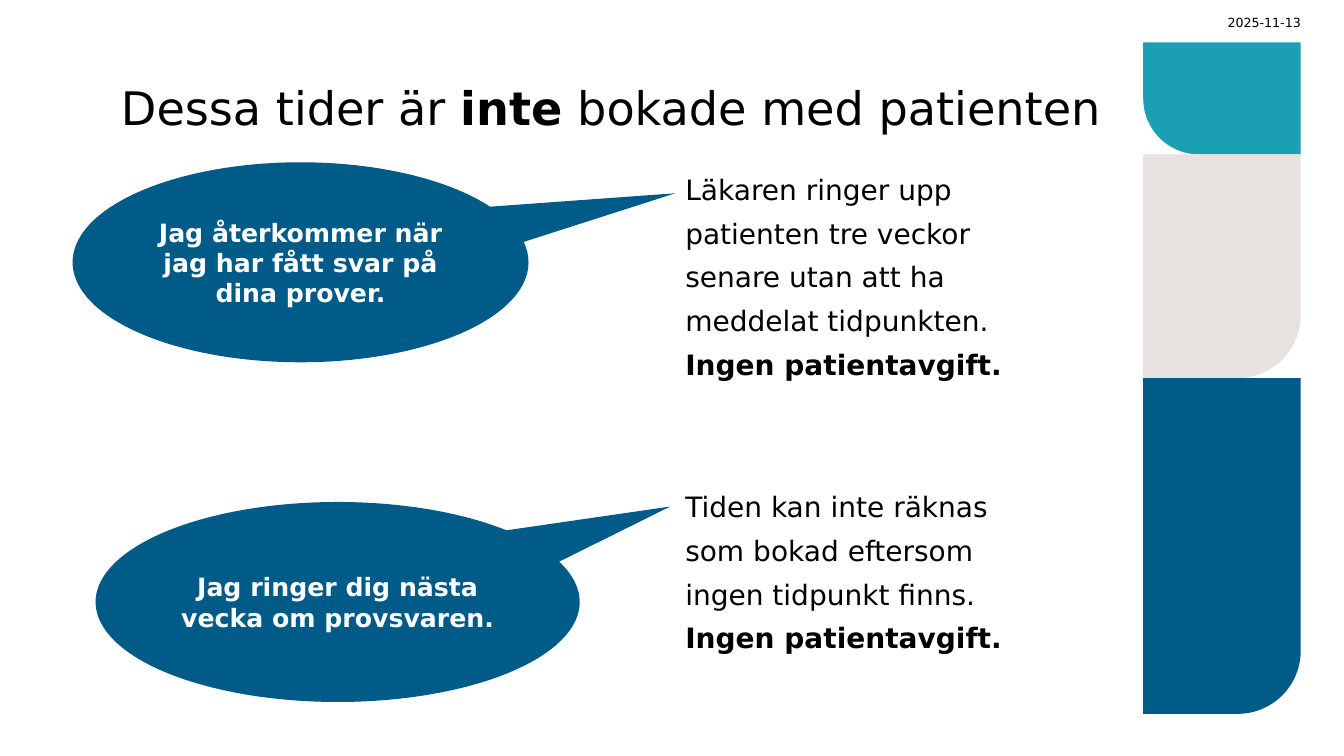
from pptx import Presentation
from pptx.dml.color import RGBColor
from pptx.enum import shapes, text
from pptx.util import Cm, Pt

FONT = "DejaVu Sans"
COLORS = {"black": "000000", "white": "FFFFFF", "teal": "1A9FB3",
          "sand": "E7E1DF", "blue": "005B89"}

deck = Presentation()
deck.slide_width, deck.slide_height = Cm(33.87), Cm(19.05)
page = deck.slides.add_slide(deck.slide_layouts[6])


def add_filled(preset, left, top, width, height, color):
    shape = page.shapes.add_shape(preset, Cm(left), Cm(top), Cm(width), Cm(height))
    shape.shadow.inherit = False
    shape.fill.solid()
    shape.fill.fore_color.rgb = RGBColor.from_string(COLORS[color])
    shape.line.fill.background()
    return shape


def write(frame, parts, size, color="black"):
    """Fill the first paragraph with (wording, bold) parts; None breaks the line."""
    frame.word_wrap = True
    para = frame.paragraphs[0]
    para.font.name, para.font.size = FONT, Pt(size)
    para.font.color.rgb = RGBColor.from_string(COLORS[color])
    for part in parts:
        if part is None:
            para.add_line_break()
            continue
        span = para.add_run()
        span.text, span.font.bold = part
    return para


# Side column: three blocks, one, two and three units high
UNIT = 2.82
block_top = 1.07
for units, color, radius in [(1, "teal", 0.5), (2, "sand", 0.4), (3, "blue", 0.4)]:
    block = add_filled(shapes.MSO_SHAPE.ROUND_1_RECTANGLE,
                       28.81, block_top, 3.97, units * UNIT, color)
    block.adjustments[0] = radius
    if color == "teal":
        block.rotation = 180  # round corner at bottom left
    else:
        block._element.spPr.xfrm.set("flipV", "1")  # round corner at bottom right
    block_top += units * UNIT

# Title, explanations and date: place, size, line spacing, space before, parts
FEE = ("Ingen patientavgift.", True)
text_boxes = [
    ((3.05, 1.85, 25.07, 3.4), 33, 1.1, 0,
     [("Dessa tider är ", False), ("inte", True), (" bokade med patienten", False)]),
    ((17.27, 4.09, 9.2, 7.19), 20, 1.3, 10,
     [("Läkaren ringer upp patienten tre veckor senare utan att ha "
       "meddelat tidpunkten. ", False), FEE]),
    ((17.27, 12.09, 9.2, 5.92), 20, 1.3, 10,
     [("Tiden kan inte räknas som bokad eftersom ingen tidpunkt finns.", False),
      None, FEE]),
    ((30.28, 0.38, 2.5, 0.38), 9, 1, 0, [("2025-11-13", False)]),
]
for place, size, spacing, before, parts in text_boxes:
    box = page.shapes.add_textbox(*map(Cm, place))
    frame = box.text_frame
    frame.margin_left = frame.margin_right = frame.margin_top = frame.margin_bottom = 0
    para = write(frame, parts, size)
    para.line_spacing, para.space_before = spacing, Pt(before)

# The date is the last box
frame.vertical_anchor = text.MSO_ANCHOR.MIDDLE
para.alignment = text.PP_ALIGN.RIGHT

# Speech bubbles: left, top, width, pointer tip, wording
bubbles = [
    (2.41, 12.65, 12.2, (0.687, -0.477), "Jag ringer dig nästa vecka om provsvaren."),
    (1.83, 4.09, 11.49, (0.822, -0.345),
     "Jag återkommer när jag har fått svar på dina prover."),
]
for left, top, width, tip, wording in bubbles:
    bubble = add_filled(shapes.MSO_SHAPE.OVAL_CALLOUT, left, top, width, 5.04, "blue")
    bubble.adjustments[0], bubble.adjustments[1] = tip
    bubble.text_frame.vertical_anchor = text.MSO_ANCHOR.MIDDLE
    para = write(bubble.text_frame, [(wording, True)], 18, "white")
    para.alignment = text.PP_ALIGN.CENTER

deck.save("out.pptx")
